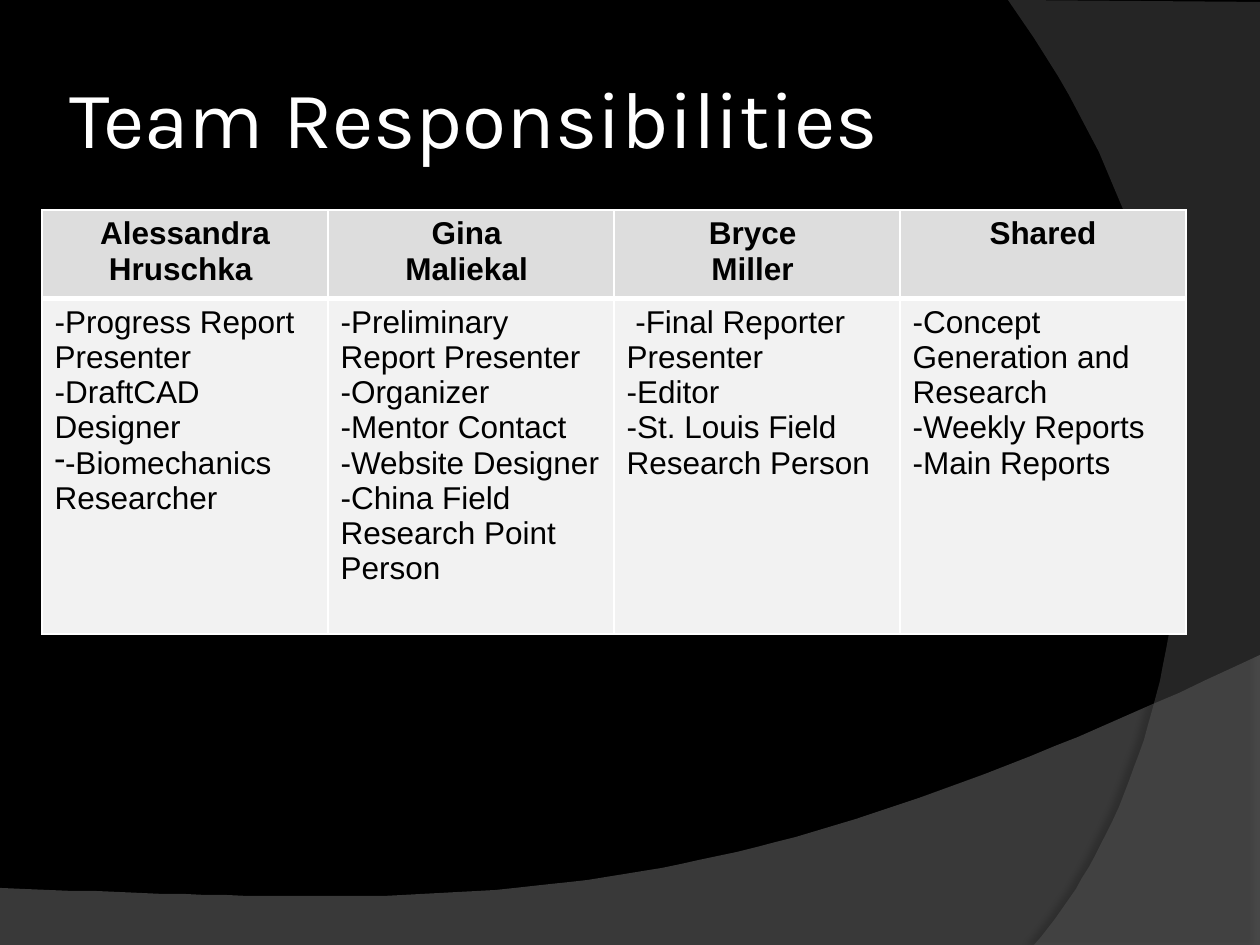
import pptx
import pptx.util
import pptx.oxml
import pptx.oxml.ns
import pptx.dml.color
import pptx.enum.text

SCALE = 914400 / 126
RGB = pptx.dml.color.RGBColor.from_string
NS = pptx.oxml.ns.nsdecls("a")
ALIGN = pptx.enum.text.PP_ALIGN

theme = {
    "back": "000000", "wave": "7F7F7F", "arc": "5E5E5E", "line": "FFFFFF",
    "title": {"name": "Karla", "size": pptx.util.Pt(46), "bold": False, "color": "FFFFFF"},
    "head": {"name": "Arial", "size": pptx.util.Pt(18), "bold": True, "color": "000000"},
    "body": {"name": "Arial", "size": pptx.util.Pt(18), "bold": False, "color": "000000"},
    "fills": {"head": "DDDDDD", "body": "F2F2F2"},
}


def px(num):
    return round(num * SCALE)


def write(para, text, style):
    run = para.add_run()
    run.text = text
    for key, val in style.items():
        if key == "color":
            run.font.color.rgb = RGB(val)
        else:
            setattr(run.font, key, val)


deck = pptx.Presentation()
deck.slide_width, deck.slide_height = px(1260), px(945)
slide = deck.slides.add_slide(deck.slide_layouts[6])
slide.background.fill.solid()
slide.background.fill.fore_color.rgb = RGB(theme["back"])

swoops = [
    {"color": "wave", "alpha": 45, "shade": 35, "dist": 3.5, "turn": 270,
     "edge": [(0, 888), (0, 945), (1260, 945)],
     "curve": [(1260, 655), (704, 919), (493, 906), (0, 888)]},
    {"color": "arc", "alpha": 40, "shade": 45, "dist": 4, "turn": 180,
     "edge": [(1260, 2), (1260, 945)],
     "curve": [(1034, 945), (1178, 780), (1283, 378), (1008, 0)]},
]
STEPS = 60
for swoop in swoops:
    points = list(swoop["edge"])
    for step in range(STEPS + 1):
        t = step / STEPS
        parts = [(1 - t) ** 3, 3 * t * (1 - t) ** 2, 3 * t * t * (1 - t), t ** 3]
        points.append(tuple(sum(w * dot[axis] for w, dot in zip(parts, swoop["curve"]))
                            for axis in (0, 1)))
    pen = slide.shapes.build_freeform(*points[0], scale=SCALE)
    pen.add_line_segments(points[1:], close=True)
    shape = pen.convert_to_shape()
    shape.fill.solid()
    shape.fill.fore_color.rgb = RGB(theme[swoop["color"]])
    shape.line.fill.background()
    tint = shape.fill._xPr.find(".//" + pptx.oxml.ns.qn("a:srgbClr"))
    tint.append(pptx.oxml.parse_xml(f'<a:alpha {NS} val="{swoop["alpha"] * 1000}"/>'))
    shape._element.spPr.append(pptx.oxml.parse_xml(
        f'<a:effectLst {NS}><a:outerShdw blurRad="{pptx.util.Pt(4)}" '
        f'dist="{pptx.util.Pt(swoop["dist"])}" dir="{swoop["turn"] * 60000}">'
        f'<a:srgbClr val="000000"><a:alpha val="{swoop["shade"] * 1000}"/></a:srgbClr>'
        '</a:outerShdw></a:effectLst>'))

box = slide.shapes.add_textbox(px(63), px(38), px(1029), px(157))
frame = {"word_wrap": True, "vertical_anchor": pptx.enum.text.MSO_ANCHOR.MIDDLE,
         "margin_left": px(6), "margin_right": px(6),
         "margin_top": px(6), "margin_bottom": px(6)}
for key, val in frame.items():
    setattr(box.text_frame, key, val)
write(box.text_frame.paragraphs[0], "Team Responsibilities", theme["title"])

rows = {
    "head": [["Alessandra Hruschka "], ["Gina ", "Maliekal "], ["Bryce ", "Miller "], ["Shared"]],
    "body": [
        ["-Progress Report Presenter", "-DraftCAD Designer", "-Biomechanics Researcher"],
        ["-Preliminary Report Presenter", "-Organizer", "-Mentor Contact",
         "-Website Designer", "-China Field Research Point Person"],
        [" -Final Reporter Presenter", "-Editor", "-St. Louis Field Research Person"],
        ["-Concept Generation and Research", "-Weekly Reports", "-Main Reports"],
    ],
}
grid = slide.shapes.add_table(2, 4, px(42), px(210), px(1144), px(420)).table
for col in grid.columns:
    col.width = px(286)
for row, high in zip(grid.rows, (84, 336)):
    row.height = px(high)

for row, (kind, cells) in enumerate(rows.items()):
    for col, lines in enumerate(cells):
        cell = grid.cell(row, col)
        props = cell._tc.get_or_add_tcPr()
        for side in "LRTB":
            thick = 3 if (kind, side) in (("head", "B"), ("body", "T")) else 1
            props.append(pptx.oxml.parse_xml(
                f'<a:ln{side} {NS} w="{pptx.util.Pt(thick)}"><a:solidFill>'
                f'<a:srgbClr val="{theme["line"]}"/></a:solidFill></a:ln{side}>'))
        cell.fill.solid()
        cell.fill.fore_color.rgb = RGB(theme["fills"][kind])
        for spot, text in enumerate(lines):
            para = cell.text_frame.paragraphs[0] if spot == 0 else cell.text_frame.add_paragraph()
            para.alignment = ALIGN.CENTER if kind == "head" else ALIGN.LEFT
            write(para, text, theme[kind])

point = grid.cell(1, 0).text_frame.paragraphs[2]
point._p.get_or_add_pPr().append(pptx.oxml.parse_xml(f'<a:buChar {NS} char="-"/>'))

deck.save("out.pptx")
